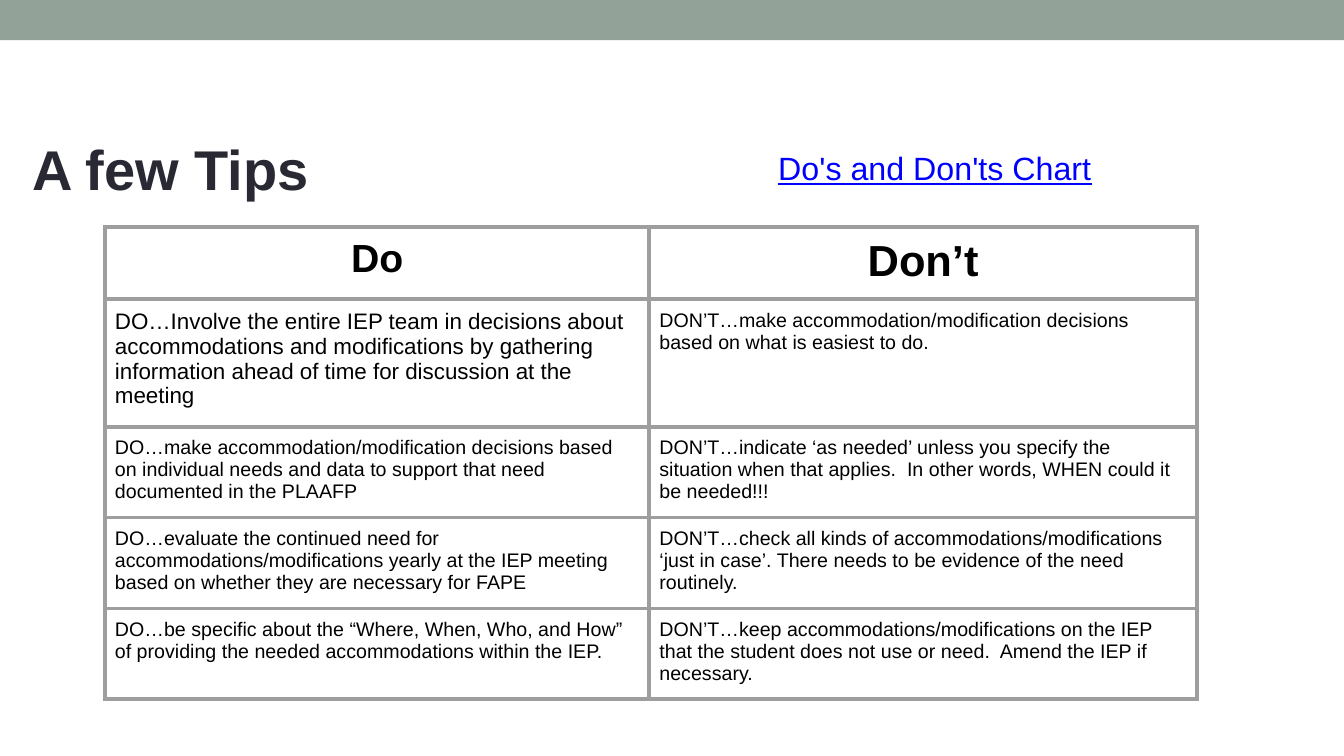
from dataclasses import dataclass

from pptx import Presentation
from pptx.dml.color import RGBColor
from pptx.enum import shapes, text
from pptx.oxml import parse_xml
from pptx.oxml.ns import nsdecls
from pptx.util import Inches, Pt


@dataclass(frozen=True)
class Theme:
    font: str = "Arial"
    band: str = "93A299"
    title: str = "292934"
    link: str = "0000FF"
    ink: str = "000000"
    border: str = "9E9E9E"
    paper: str = "FFFFFF"
    title_size: int = 40
    link_size: int = 23
    do_size: int = 28
    dont_size: int = 31
    lead_size: int = 16
    body_size: int = 14
    border_width: int = 3


THEME = Theme()
MARGIN = Inches(0.1)

TIPS = [
    ("Do", "Don’t"),
    ("DO…Involve the entire IEP team in decisions about accommodations and modifications "
     "by gathering information ahead of time for discussion at the meeting",
     "DON’T…make accommodation/modification decisions based on what is easiest to do."),
    ("DO…make accommodation/modification decisions based on individual needs and data "
     "to support that need documented in the PLAAFP",
     "DON’T…indicate ‘as needed’ unless you specify the situation when that applies.  "
     "In other words, WHEN could it be needed!!!"),
    ("DO…evaluate the continued need for accommodations/modifications yearly at the IEP "
     "meeting based on whether they are necessary for FAPE",
     "DON’T…check all kinds of accommodations/modifications ‘just in case’. "
     "There needs to be evidence of the need routinely."),
    ("DO…be specific about the “Where, When, Who, and How” of providing the needed "
     "accommodations within the IEP.",
     "DON’T…keep accommodations/modifications on the IEP that the student does not use "
     "or need.  Amend the IEP if necessary."),
]
SIZES = {(0, 0): THEME.do_size, (0, 1): THEME.dont_size, (1, 0): THEME.lead_size}
COLUMN_WIDTHS = [5.4, 5.43]
ROW_HEIGHTS = [0.68, 1.19, 0.85, 0.85, 0.85]


def write(p, words, color, **font):
    r = p.add_run()
    r.text = words
    r.font.color.rgb = RGBColor.from_string(color)
    for name, value in {"name": THEME.font, **font}.items():
        setattr(r.font, name, value)


def add_band(s, box):
    sp = s.shapes.add_shape(shapes.MSO_SHAPE.RECTANGLE, *map(Inches, box))
    sp.shadow.inherit = False
    sp.fill.solid()
    sp.fill.fore_color.rgb = RGBColor.from_string(THEME.band)
    sp.line.fill.background()


def add_label(s, box, words, color, frame, **font):
    tf = s.shapes.add_textbox(*map(Inches, box)).text_frame
    for name, value in {"word_wrap": True, **frame}.items():
        setattr(tf, name, value)
    write(tf.paragraphs[0], words, color, **font)


def outline(cell):
    """Draw all four borders of a table cell, ahead of its fill."""
    props = cell._tc.get_or_add_tcPr()
    for i, side in enumerate(("lnL", "lnR", "lnT", "lnB")):
        props.insert(i, parse_xml(
            f'<a:{side} {nsdecls("a")} w="{Pt(THEME.border_width)}"><a:solidFill>'
            f'<a:srgbClr val="{THEME.border}"/></a:solidFill></a:{side}>'))


def add_tips(s, left, top):
    size = Inches(sum(COLUMN_WIDTHS)), Inches(sum(ROW_HEIGHTS))
    table = s.shapes.add_table(len(TIPS), len(COLUMN_WIDTHS),
                               Inches(left), Inches(top), *size).table
    table.horz_banding = False
    for column, width in zip(table.columns, COLUMN_WIDTHS):
        column.width = Inches(width)
    for i, (row, height) in enumerate(zip(table.rows, ROW_HEIGHTS)):
        row.height = Inches(height)
        for j, cell in enumerate(row.cells):
            for side in ("left", "right", "top", "bottom"):
                setattr(cell, f"margin_{side}", MARGIN)
            cell.fill.solid()
            cell.fill.fore_color.rgb = RGBColor.from_string(THEME.paper)
            outline(cell)
            p = cell.text_frame.paragraphs[0]
            p.alignment = text.PP_ALIGN.LEFT if i else text.PP_ALIGN.CENTER
            write(p, TIPS[i][j], THEME.ink, bold=i == 0,
                  size=Pt(SIZES.get((i, j), THEME.body_size)))


def build_tips_slide(prs):
    s = prs.slides.add_slide(prs.slide_layouts[6])
    add_band(s, (0, 0, 13.33, 0.4))
    add_label(s, (0.22, 1.08, 12.89, 1.17), "A few Tips", THEME.title,
              {"vertical_anchor": text.MSO_ANCHOR.MIDDLE},
              size=Pt(THEME.title_size), bold=True)
    add_tips(s, 1.04, 2.25)
    add_label(s, (7.62, 1.37, 4.49, 0.59), "Do's and Don'ts Chart", THEME.link,
              {"margin_top": MARGIN, "margin_bottom": MARGIN},
              size=Pt(THEME.link_size), underline=True)


def main():
    prs = Presentation()
    prs.slide_width, prs.slide_height = Inches(13.33), Inches(7.5)
    build_tips_slide(prs)
    prs.save("out.pptx")


if __name__ == "__main__":
    main()
